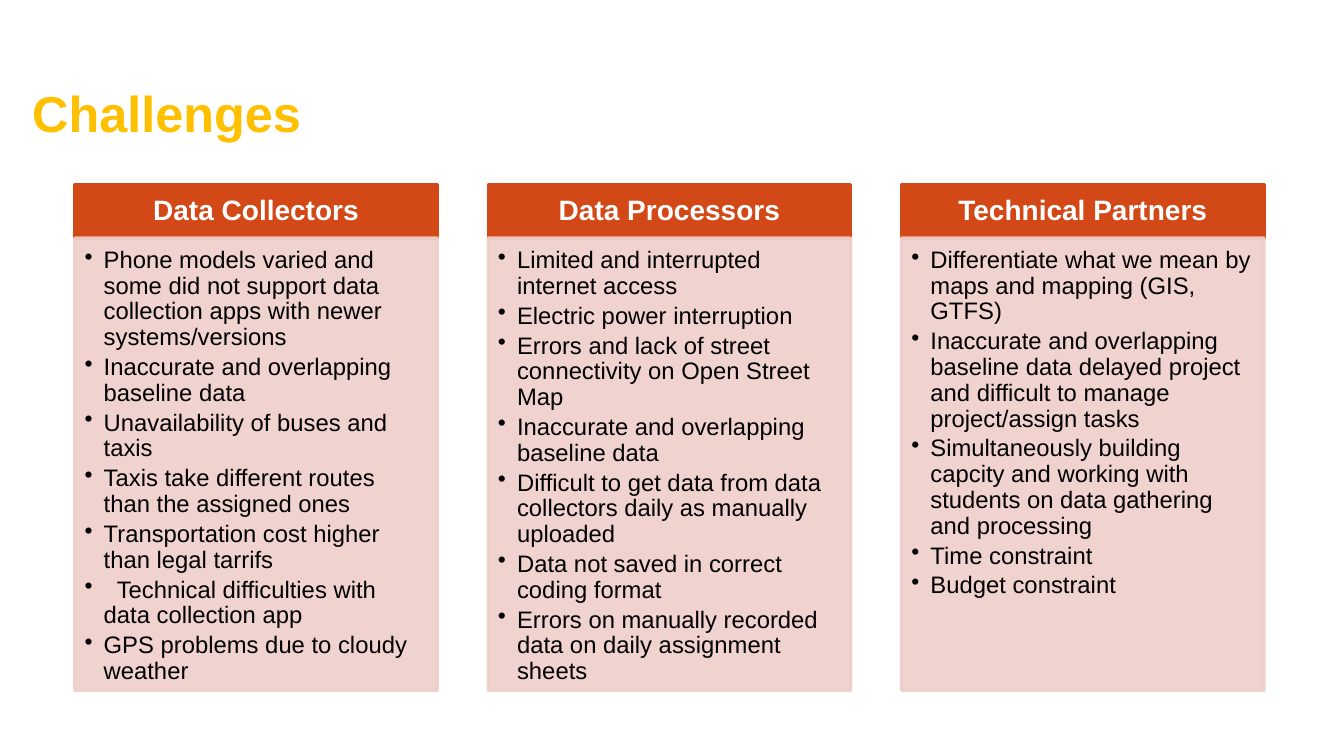
from lxml.etree import SubElement
from pptx import Presentation
from pptx.dml.color import RGBColor
from pptx.enum.shapes import MSO_SHAPE
from pptx.enum.text import MSO_ANCHOR as Anchor, PP_ALIGN as Align
from pptx.oxml.ns import qn
from pptx.util import Pt

PX = 9144  # 100 px to the inch
COLORS = {"title": "FFC000", "header": "D34817", "panel": "EFCECA",
          "light": "FFFFFF", "dark": "000000"}
LEFT, STEP, WIDTH = 74, 410, 360
HEADER_TOP, HEADER_HEIGHT, PANEL_TOP, PANEL_HEIGHT = 183, 54, 236, 449
INDENT, TAB_STOP = 19, 32

COLUMNS = [
    ("Data Collectors", [
        "Phone models varied and some did not support data collection apps "
        "with newer systems/versions",
        "Inaccurate and overlapping baseline data",
        "Unavailability of buses and taxis",
        "Taxis take different routes than the assigned ones",
        "Transportation cost higher than legal tarrifs",
        "\tTechnical difficulties with data collection app",
        "GPS problems due to cloudy weather",
    ]),
    ("Data Processors", [
        "Limited and interrupted internet access",
        "Electric power interruption",
        "Errors and lack of street connectivity on Open Street Map",
        "Inaccurate and overlapping baseline data",
        "Difficult to get data from data collectors daily as manually uploaded",
        "Data not saved in correct coding format",
        "Errors on manually recorded data on daily assignment sheets",
    ]),
    ("Technical Partners", [
        "Differentiate what we mean by maps and mapping (GIS, GTFS)",
        "Inaccurate and overlapping baseline data delayed project and "
        "difficult to manage project/assign tasks",
        "Simultaneously building capcity and working with students on data "
        "gathering and processing",
        "Time constraint",
        "Budget constraint",
    ]),
]


def add_block(left, top, height, color):
    """Add a column-wide rectangle with matching fill and outline."""
    block = slide.shapes.add_shape(MSO_SHAPE.RECTANGLE, left * PX, top * PX,
                                   WIDTH * PX, height * PX)
    block.shadow.inherit = False
    block.fill.solid()
    block.line.width = Pt(2)
    for paint in (block.fill.fore_color, block.line.color):
        paint.rgb = RGBColor.from_string(COLORS[color])
    return block


def write(frame, paragraph, text, size, color, bold, inset):
    """Write one run and set the margins of its frame."""
    frame.word_wrap = True
    frame.margin_left = frame.margin_right = inset * PX
    frame.margin_top = frame.margin_bottom = inset * PX
    paragraph.line_spacing = 0.9
    run = paragraph.add_run()
    run.text = text
    run.font.name = "Arial"
    run.font.size = Pt(size)
    run.font.bold = bold
    run.font.color.rgb = RGBColor.from_string(COLORS[color])


prs = Presentation()
prs.slide_width, prs.slide_height = 1333 * PX, 750 * PX
slide = prs.slides.add_slide(prs.slide_layouts[6])

for column, (heading, challenges) in enumerate(COLUMNS):
    left = LEFT + column * STEP

    header = add_block(left, HEADER_TOP, HEADER_HEIGHT, "header").text_frame
    header.vertical_anchor = Anchor.MIDDLE
    header.paragraphs[0].alignment = Align.CENTER
    write(header, header.paragraphs[0], heading, 20, "light", True, 9)

    panel = add_block(left, PANEL_TOP, PANEL_HEIGHT, "panel")
    for paint in panel._element.spPr.iter(qn("a:srgbClr")):
        SubElement(paint, qn("a:alpha"), val="90000")

    frame = panel.text_frame
    frame.vertical_anchor = Anchor.TOP
    for row, challenge in enumerate(challenges):
        paragraph = frame.add_paragraph() if row else frame.paragraphs[0]
        props = paragraph._p.get_or_add_pPr()
        props.set("marL", str(INDENT * PX))
        props.set("indent", str(-INDENT * PX))
        SubElement(props, qn("a:buChar"), char="•")
        if challenge.startswith("\t"):
            tabs = SubElement(props, qn("a:tabLst"))
            SubElement(tabs, qn("a:tab"), pos=str(TAB_STOP * PX), algn="l")
        paragraph.alignment = Align.LEFT
        if row:
            paragraph.space_before = Pt(3)
        write(frame, paragraph, challenge, 17, "dark", False, 10)

title = slide.shapes.add_textbox(27 * PX, 82 * PX, 1100 * PX, 67 * PX).text_frame
title.vertical_anchor = Anchor.MIDDLE
write(title, title.paragraphs[0], "Challenges", 36, "title", True, 5)

prs.save("out.pptx")
